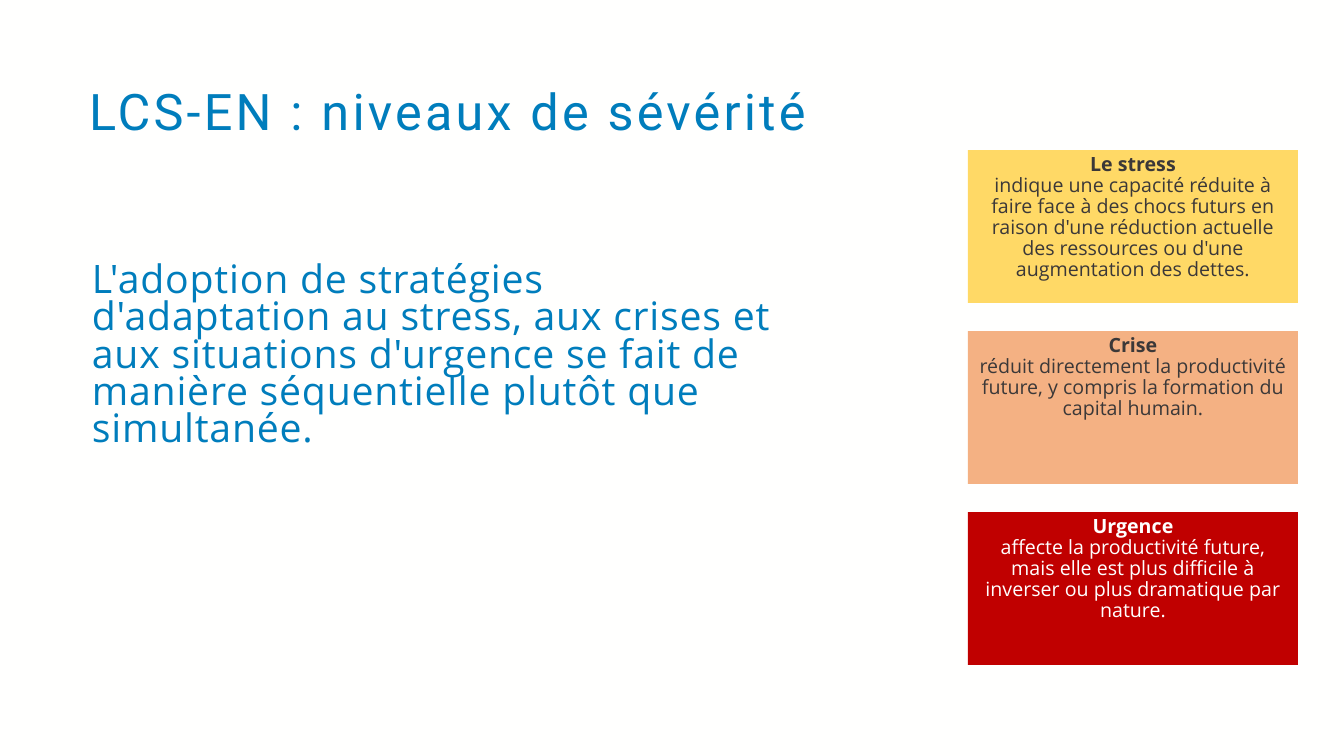
from pptx import Presentation
from pptx.dml.color import RGBColor
from pptx.enum.shapes import MSO_SHAPE
from pptx.enum.text import MSO_ANCHOR, PP_ALIGN
from pptx.util import Emu, Pt

RECT = MSO_SHAPE.RECTANGLE
TOP, MIDDLE = MSO_ANCHOR.TOP, MSO_ANCHOR.MIDDLE
LEFT, CENTER = PP_ALIGN.LEFT, PP_ALIGN.CENTER
EMU_PER_PX = 914400 / 100.8
COLORS = {
    "background": "FFFFFE",
    "blue": "007DBC",
    "dark": "3B3838",
    "white": "FFFFFF",
    "stress": "FFD966",
    "crisis": "F4B183",
    "emergency": "C00000",
}


def px(n):
    return Emu(round(n * EMU_PER_PX))


def rgb(name):
    return RGBColor.from_string(COLORS[name])


def write(p, text, font="Open Sans", size=14, color="dark", bold=False,
          align=LEFT, line=0.9, spacing=0):
    """Write one formatted run; spacing is in points between letters."""
    p.alignment = align
    p.line_spacing = line
    p.space_before = Pt(0)
    r = p.add_run()
    r.text = text
    r.font.name = font
    r.font.size = Pt(size)
    r.font.bold = bold
    r.font.color.rgb = rgb(color)
    if spacing:
        r.font._element.set("spc", str(round(spacing * 100)))


class SlideBuilder:
    def __init__(self, prs):
        self.slide = prs.slides.add_slide(prs.slide_layouts[5])
        fill = self.slide.background.fill
        fill.solid()
        fill.fore_color.rgb = rgb("background")

    def frame(self, sp, anchor=TOP, top=5):
        tf = sp.text_frame
        tf.word_wrap = True
        tf.vertical_anchor = anchor
        tf.margin_left = tf.margin_right = px(10)
        tf.margin_top, tf.margin_bottom = px(top), px(5)
        return tf

    def title(self, text, x, y, w, h):
        sp = self.slide.shapes.title
        sp.left, sp.top, sp.width, sp.height = map(px, (x, y, w, h))
        tf = self.frame(sp, MIDDLE)
        write(tf.paragraphs[0], text, font="Roboto", size=36, color="blue",
              spacing=2.3)

    def statement(self, text, x, y, w, h, top):
        sp = self.slide.shapes.add_textbox(*map(px, (x, y, w, h)))
        tf = self.frame(sp, top=top)
        write(tf.paragraphs[0], text, size=28, color="blue", line=0.79,
              spacing=0.6)

    def card(self, heading, body, fill, color, x, y, w, h):
        sp = self.slide.shapes.add_shape(RECT, *map(px, (x, y, w, h)))
        sp.shadow.inherit = False
        sp.fill.solid()
        sp.fill.fore_color.rgb = rgb(fill)
        sp.line.fill.background()
        tf = self.frame(sp)
        style = dict(color=color, align=CENTER, line=0.89)
        write(tf.paragraphs[0], heading, bold=True, **style)
        write(tf.add_paragraph(), body, **style)


def main():
    prs = Presentation()
    prs.slide_width, prs.slide_height = px(1344), px(756)
    s = SlideBuilder(prs)

    # Title and main statement
    s.title("LCS-EN : niveaux de sévérité", 79, 78, 1219, 73)
    s.statement("L'adoption de stratégies d'adaptation au stress, aux crises "
                "et aux situations d'urgence se fait de manière séquentielle "
                "plutôt que simultanée.", 82, 181, 706, 430, top=83)

    # Severity levels, evenly stacked
    levels = [
        ("Le stress",
         "indique une capacité réduite à faire face à des chocs futurs en "
         "raison d'une réduction actuelle des ressources ou d'une "
         "augmentation des dettes.", "stress", "dark"),
        ("Crise",
         "réduit directement la productivité future, y compris la formation "
         "du capital humain.", "crisis", "dark"),
        ("Urgence",
         "affecte la productivité future, mais elle est plus difficile à "
         "inverser ou plus dramatique par nature.", "emergency", "white"),
    ]
    for i, level in enumerate(levels):
        s.card(*level, 968, 150 + 181 * i, 330, 153)

    prs.save("out.pptx")


if __name__ == "__main__":
    main()
